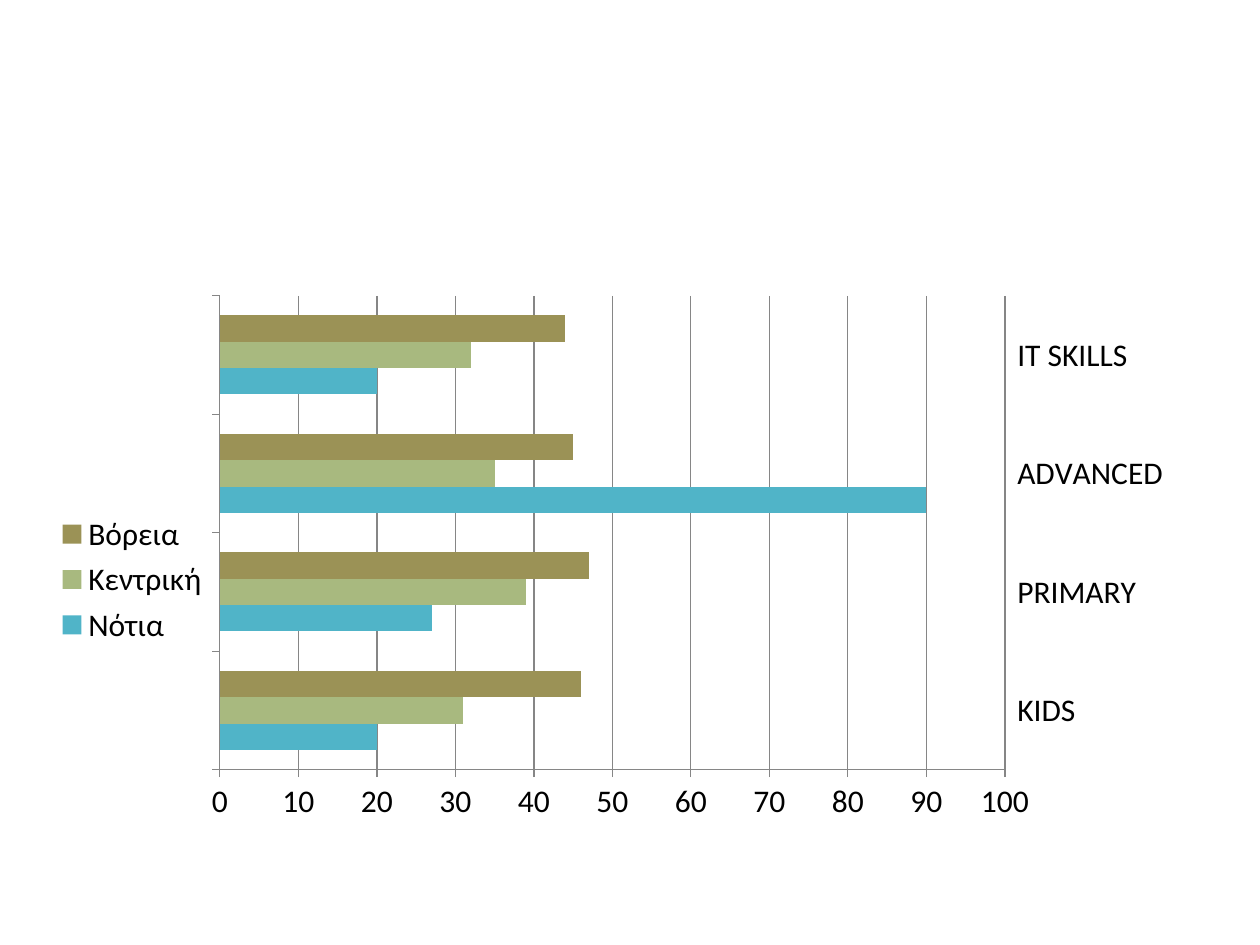
from typing import NamedTuple

from lxml.etree import SubElement
from pptx import Presentation
from pptx.chart.data import CategoryChartData
from pptx.dml.color import RGBColor
from pptx.enum.chart import XL_CHART_TYPE as ChartType
from pptx.enum.chart import XL_LEGEND_POSITION as LegendPosition
from pptx.enum.chart import XL_TICK_LABEL_POSITION as LabelPosition
from pptx.enum.chart import XL_TICK_MARK as TickMark
from pptx.oxml.ns import qn
from pptx.util import Inches, Pt

BLACK = RGBColor(0x00, 0x00, 0x00)
GRAY = RGBColor(0x86, 0x86, 0x86)
TEAL = RGBColor(0x50, 0xB4, 0xC8)
GREEN = RGBColor(0xA8, 0xB9, 0x7F)
OLIVE = RGBColor(0x9B, 0x92, 0x56)

BLANK_LAYOUT = 6


class Region(NamedTuple):
    name: str
    values: tuple
    color: RGBColor


class Share(NamedTuple):
    """A box given as shares of whatever holds it."""
    x: float
    y: float
    w: float
    h: float


COURSES = ("KIDS", "PRIMARY", "ADVANCED", "IT SKILLS")
REGIONS = (
    Region("Νότια", (20, 27, 90, 20), TEAL),
    Region("Κεντρική", (31, 39, 35, 32), GREEN),
    Region("Βόρεια", (46, 47, 45, 44), OLIVE),
)
CHART_BOX = Share(0.035, 0.28, 0.93, 0.66)
PLOT_BOX = Share(0.15, 0.05, 0.67, 0.76)
LEGEND_BOX = Share(0.01, 0.39, 0.13, 0.23)


def place_part(part, box: Share, index: int, inner: bool = False) -> None:
    """Fix a chart part (plot area or legend) at shares of the chart."""
    for old in part.findall(qn("c:layout")):
        part.remove(old)
    layout = SubElement(part, qn("c:layout"))
    part.insert(index, layout)
    manual = SubElement(layout, qn("c:manualLayout"))
    settings = {"layoutTarget": "inner"} if inner else {}
    settings |= {"xMode": "edge", "yMode": "edge"}
    settings |= {key: str(value) for key, value in box._asdict().items()}
    for tag, value in settings.items():
        SubElement(manual, qn(f"c:{tag}")).set("val", value)


def draw_line(line_format) -> None:
    line_format.color.rgb = GRAY
    line_format.width = Pt(0.75)


def format_axes(chart) -> None:
    for axis in (chart.category_axis, chart.value_axis):
        axis.major_tick_mark = TickMark.OUTSIDE
        axis.minor_tick_mark = TickMark.NONE
        draw_line(axis.format.line)
    chart.category_axis.tick_label_position = LabelPosition.HIGH
    values = chart.value_axis
    values.minimum_scale, values.maximum_scale, values.major_unit = 0, 100, 10
    values.has_major_gridlines = True
    draw_line(values.major_gridlines.format.line)


def add_region_chart(deck, page) -> None:
    data = CategoryChartData(number_format="General")
    data.categories = COURSES
    for region in REGIONS:
        data.add_series(region.name, region.values)
    width, height = deck.slide_width, deck.slide_height
    chart = page.shapes.add_chart(
        ChartType.BAR_CLUSTERED,
        int(CHART_BOX.x * width), int(CHART_BOX.y * height),
        int(CHART_BOX.w * width), int(CHART_BOX.h * height), data,
    ).chart
    chart.has_title = False
    chart.font.name, chart.font.size = "Calibri", Pt(18)
    chart.font.color.rgb = BLACK

    plot = chart.plots[0]
    plot.gap_width, plot.vary_by_categories = 150, False
    for series, region in zip(plot.series, REGIONS):
        series.format.fill.solid()
        series.format.fill.fore_color.rgb = region.color
    format_axes(chart)

    chart.has_legend = True
    chart.legend.position = LegendPosition.LEFT
    chart.legend.include_in_layout = False
    plot_area = chart.element.find(".//" + qn("c:plotArea"))
    legend = chart.element.find(".//" + qn("c:legend"))
    place_part(plot_area, PLOT_BOX, index=0, inner=True)
    place_part(legend, LEGEND_BOX, index=1)


def main() -> None:
    deck = Presentation()
    deck.slide_width, deck.slide_height = Inches(10), Inches(7.5)
    page = deck.slides.add_slide(deck.slide_layouts[BLANK_LAYOUT])
    add_region_chart(deck, page)
    deck.save("out.pptx")


if __name__ == "__main__":
    main()
